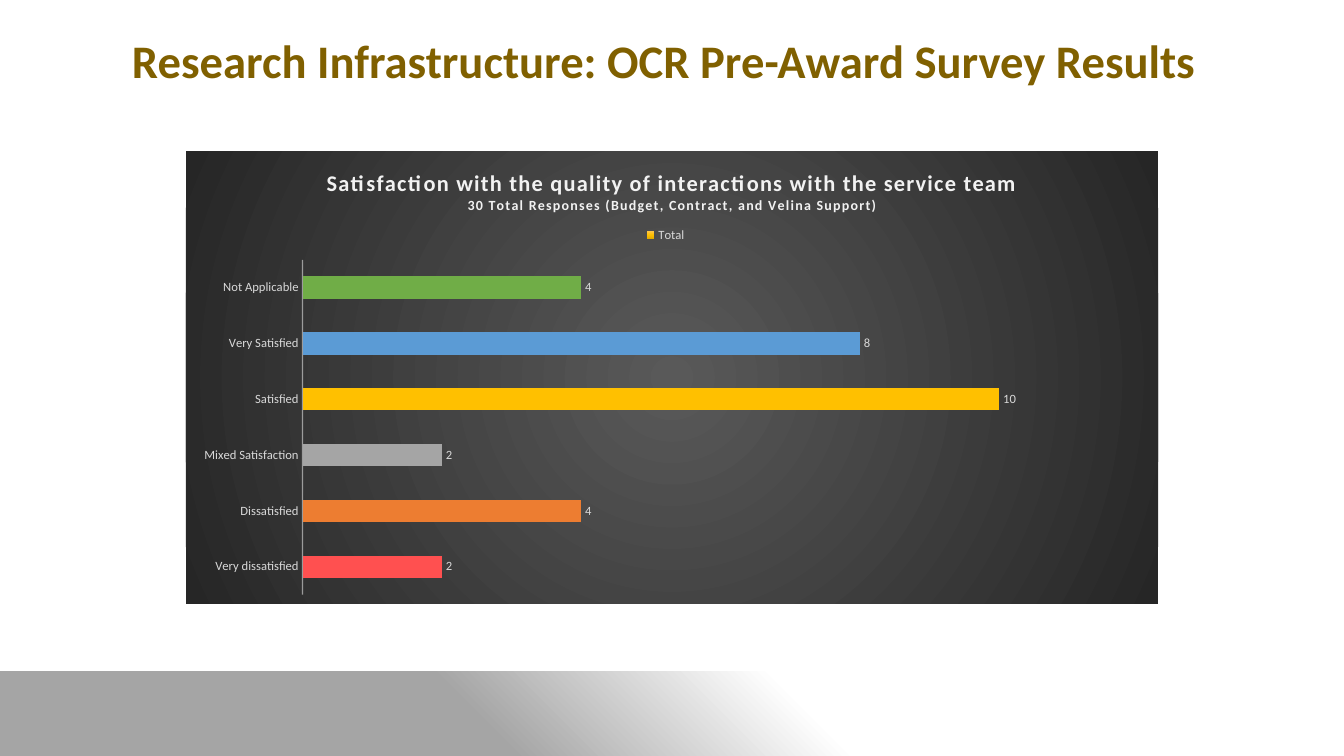
from lxml import etree
from pptx import Presentation
from pptx.chart.data import CategoryChartData
from pptx.dml.color import RGBColor
from pptx.enum.chart import XL_CHART_TYPE as CT, XL_LABEL_POSITION as LP
from pptx.enum.chart import XL_LEGEND_POSITION as LEG, XL_TICK_MARK as TM
from pptx.enum.shapes import MSO_SHAPE as SHAPE
from pptx.enum.text import MSO_ANCHOR as ANCHOR, PP_ALIGN as ALIGN
from pptx.oxml import parse_xml
from pptx.oxml.ns import nsdecls, qn
from pptx.util import Pt

PX = 9525
WHITE = RGBColor(0xFF, 0xFF, 0xFF)
BROWN = RGBColor(0x80, 0x60, 0x00)
PALE = RGBColor(0xF2, 0xF2, 0xF2)
SILVER = RGBColor(0xD9, 0xD9, 0xD9)
CHARCOAL = RGBColor(0x59, 0x59, 0x59)
BLACKISH = RGBColor(0x26, 0x26, 0x26)
RED = RGBColor(0xFF, 0x50, 0x50)
ORANGE = RGBColor(0xED, 0x7D, 0x31)
GRAY = RGBColor(0xA5, 0xA5, 0xA5)
GOLD = RGBColor(0xFF, 0xC0, 0x00)
LIGHT_GOLD = RGBColor(0xFF, 0xC6, 0x4B)
DARK_GOLD = RGBColor(0xE3, 0xAB, 0x00)
BLUE = RGBColor(0x5B, 0x9B, 0xD5)
GREEN = RGBColor(0x70, 0xAD, 0x47)

RATINGS = [
    ("Very dissatisfied", 2, RED),
    ("Dissatisfied", 4, ORANGE),
    ("Mixed Satisfaction", 2, GRAY),
    ("Satisfied", 10, GOLD),
    ("Very Satisfied", 8, BLUE),
    ("Not Applicable", 4, GREEN),
]


def gradient(stops, center=None):
    gs = "".join(f'<a:gs pos="{pos * 1000}"><a:srgbClr val="{c}"/></a:gs>' for pos, c in stops)
    if center:
        sides = " ".join(f'{k}="{v * 1000}"' for k, v in zip("ltrb", center))
        shade = f'<a:path path="circle"><a:fillToRect {sides}/></a:path>'
    else:
        shade = '<a:lin ang="5400000" scaled="0"/>'
    return parse_xml(f'<a:gradFill {nsdecls("a")} rotWithShape="1">'
                     f'<a:gsLst>{gs}</a:gsLst>{shade}</a:gradFill>')


def use_gradient(fill, element, *args):
    fill.solid()
    solid = element.find(qn("c:spPr") if element.tag == qn("c:ser") else qn("p:spPr")).find(qn("a:solidFill"))
    solid.getparent().replace(solid, gradient(*args))


def set_layout(parent, **box):
    for old in parent.findall(qn("c:layout")):
        parent.remove(old)
    target = '<c:layoutTarget val="inner"/>' if "w" in box else ""
    modes = "".join(f'<c:{k}Mode val="edge"/>' for k in "xy")
    values = "".join(f'<c:{k} val="{v}"/>' for k, v in box.items())
    layout = parse_xml(f'<c:layout {nsdecls("c")}><c:manualLayout>'
                       f'{target}{modes}{values}</c:manualLayout></c:layout>')
    if parent.tag == qn("c:legend"):
        parent.find(qn("c:legendPos")).addnext(layout)
    else:
        parent.insert(0, layout)


def style_font(font, name, size, color, bold=False):
    font.name, font.size, font.bold = name, Pt(size), bold
    font.color.rgb = color


def write(p, text, *, name, size, color, bold=False, spacing=0):
    r = p.add_run()
    r.text = text
    style_font(r.font, name, size, color, bold)
    if spacing:
        r.font._element.set("spc", str(spacing * 100))


class Deck:
    font = "Calibri"

    def __init__(self, width, height):
        self.prs = Presentation()
        self.prs.slide_width, self.prs.slide_height = width * PX, height * PX
        self.s = self.prs.slides.add_slide(self.prs.slide_layouts[6])
        self.s.background.fill.solid()
        self.s.background.fill.fore_color.rgb = WHITE

    def band(self, *box, stops, center):
        sp = self.s.shapes.add_shape(SHAPE.RECTANGLE, *(v * PX for v in box))
        sp.shadow.inherit = False
        use_gradient(sp.fill, sp._element, stops, center)
        sp.line.fill.background()

    def heading(self, text, *box):
        tf = self.s.shapes.add_textbox(*(v * PX for v in box)).text_frame
        tf.word_wrap = True
        tf.vertical_anchor = ANCHOR.BOTTOM
        p = tf.paragraphs[0]
        p.alignment, p.line_spacing, p.space_after = ALIGN.CENTER, 0.9, Pt(6)
        write(p, text, name=self.font, size=33.3, color=BROWN, bold=True)

    def bar_chart(self, ratings, titles, *box):
        data = CategoryChartData()
        data.categories = [label for label, _, _ in ratings]
        data.add_series("Total", [value for _, value, _ in ratings])
        chart = self.s.shapes.add_chart(CT.BAR_CLUSTERED, *(v * PX for v in box), data).chart
        style_font(chart.font, self.font, 10, SILVER)
        self.chart_background(chart)
        self.chart_title(chart, titles)
        self.chart_legend(chart)
        self.chart_axes(chart)
        self.chart_bars(chart.plots[0], ratings)
        set_layout(chart._chartSpace.chart.plotArea, x=0.12, y=0.24, w=0.86, h=0.74)

    def chart_background(self, chart):
        spPr = parse_xml(f'<c:spPr {nsdecls("c", "a")}><a:ln><a:noFill/></a:ln></c:spPr>')
        spPr.insert(0, gradient([(0, CHARCOAL), (100, BLACKISH)], (50, 50, 50, 50)))
        chart._chartSpace.chart.addnext(spPr)

    def chart_title(self, chart, titles):
        chart.has_title = True
        tf = chart.chart_title.text_frame
        for i, (text, size) in enumerate(titles):
            p = tf.add_paragraph() if i else tf.paragraphs[0]
            write(p, text, name=self.font, size=size, color=PALE, bold=True, spacing=1)
        chart.chart_title.include_in_layout = False

    def chart_legend(self, chart):
        chart.has_legend = True
        chart.legend.position = LEG.TOP
        chart.legend.include_in_layout = False
        style_font(chart.legend.font, self.font, 9, SILVER)
        set_layout(chart.legend._element, x=0.47, y=0.16)

    def chart_axes(self, chart):
        values, cats = chart.value_axis, chart.category_axis
        values.minimum_scale, values.maximum_scale = 0, 12
        values.has_major_gridlines = False
        values.visible = False
        cats.major_tick_mark = cats.minor_tick_mark = TM.NONE
        style_font(cats.tick_labels.font, self.font, 9, SILVER)
        cats.format.line.width = Pt(1)
        cats.format.line.color.rgb = PALE
        color = cats._element.xpath("c:spPr/a:ln//a:srgbClr")[0]
        etree.SubElement(color, qn("a:alpha")).set("val", "54000")

    def chart_bars(self, plot, ratings):
        plot.gap_width, plot.overlap, plot.vary_by_categories = 150, -25, False
        ser = plot.series[0]
        use_gradient(ser.format.fill, ser._element,
                     [(0, LIGHT_GOLD), (50, GOLD), (100, DARK_GOLD)])
        for i, (_, _, color) in enumerate(ratings):
            fill = ser.points[i].format.fill
            fill.solid()
            fill.fore_color.rgb = color
        labels = ser.data_labels
        labels.show_value = True
        labels.position = LP.OUTSIDE_END
        style_font(labels.font, self.font, 9, SILVER)


def main():
    deck = Deck(1280, 720)
    deck.band(0, 640, 1280, 80, center=(0, 100, 100, 0),
              stops=[(36, GRAY), (60, WHITE), (100, WHITE)])
    deck.heading("Research Infrastructure: OCR Pre-Award Survey Results", 87, 7, 1091, 82)
    titles = [
        ("Satisfaction with the quality of interactions with the service team", 16),
        ("30 Total Responses (Budget, Contract, and Velina Support)", 10),
    ]
    deck.bar_chart(RATINGS, titles, 177, 144, 926, 431)
    deck.prs.save("out.pptx")


if __name__ == "__main__":
    main()
